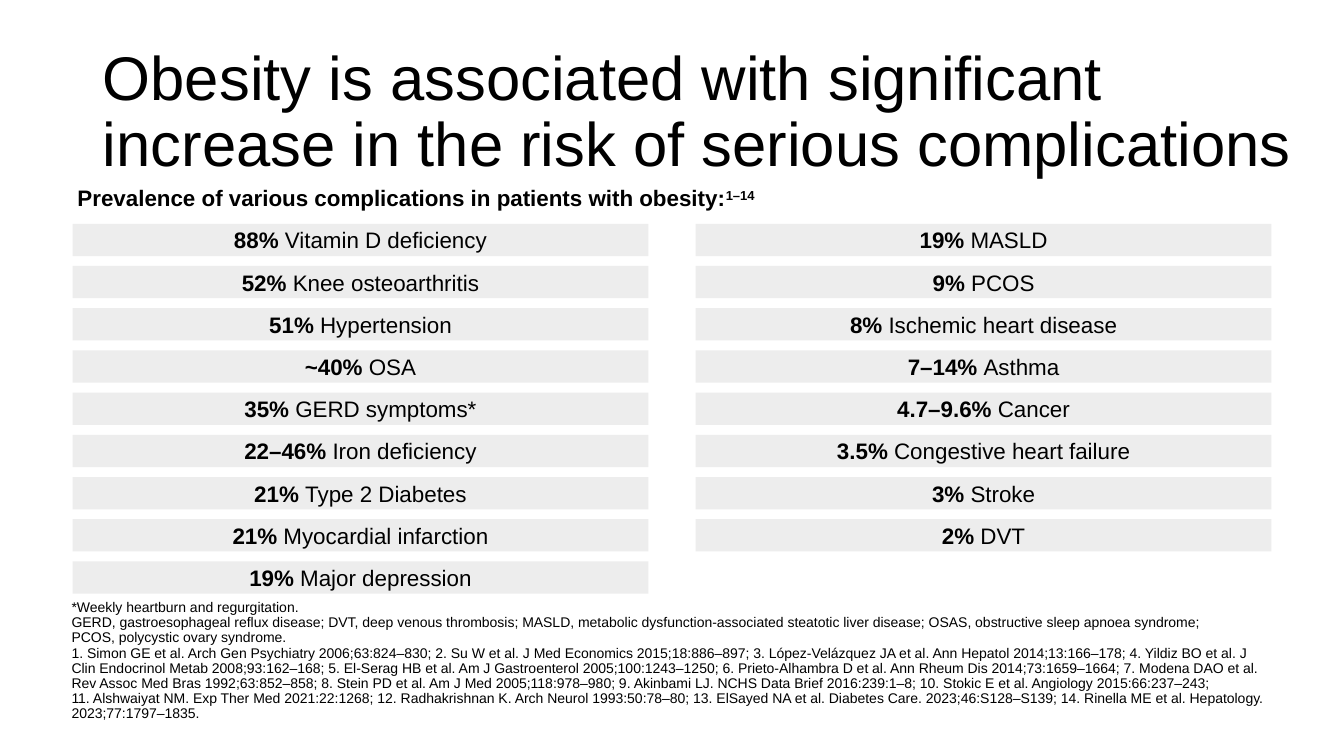
"""Build a slide on the prevalence of complications in patients with obesity."""
from pptx import Presentation
from pptx.dml.color import RGBColor
from pptx.enum.shapes import MSO_SHAPE as SHAPE
from pptx.enum.text import MSO_ANCHOR as ANCHOR, MSO_AUTO_SIZE as AUTO, PP_ALIGN as ALIGN
from pptx.util import Inches, Pt

TITLE = "Obesity is associated with significant increase in the risk of serious complications"
SUBTITLE = "Prevalence of various complications in patients with obesity:"
SUBTITLE_REFS = "1–14"
COLUMNS = [
    (0.72, [
        ("88%", "Vitamin D deficiency"),
        ("52%", "Knee osteoarthritis"),
        ("51%", "Hypertension"),
        ("~40%", "OSA"),
        ("35%", "GERD symptoms*"),
        ("22–46%", "Iron deficiency"),
        ("21%", "Type 2 Diabetes"),
        ("21%", "Myocardial infarction"),
        ("19%", "Major depression"),
    ]),
    (6.9, [
        ("19%", "MASLD"),
        ("9%", "PCOS"),
        ("8%", "Ischemic heart disease"),
        ("7–14%", "Asthma"),
        ("4.7–9.6%", "Cancer"),
        ("3.5%", "Congestive heart failure"),
        ("3%", "Stroke"),
        ("2%", "DVT"),
    ]),
]
FOOTNOTES = [
    "*Weekly heartburn and regurgitation.",
    "GERD, gastroesophageal reflux disease; DVT, deep venous thrombosis; MASLD, metabolic "
    "dysfunction-associated steatotic liver disease; OSAS, obstructive sleep apnoea syndrome; ",
    "PCOS, polycystic ovary syndrome.",
    "1. Simon GE et al. Arch Gen Psychiatry 2006;63:824–830; "
    "2. Su W et al. J Med Economics 2015;18:886–897; "
    "3. López-Velázquez JA et al. Ann Hepatol 2014;13:166–178; "
    "4. Yildiz BO et al. J Clin Endocrinol Metab 2008;93:162–168; "
    "5. El-Serag HB et al. Am J Gastroenterol 2005;100:1243–1250; "
    "6. Prieto-Alhambra D et al. Ann Rheum Dis 2014;73:1659–1664; "
    "7. Modena DAO et al. Rev Assoc Med Bras 1992;63:852–858; "
    "8. Stein PD et al. Am J Med 2005;118:978–980; "
    "9. Akinbami LJ. NCHS Data Brief 2016:239:1–8; "
    "10. Stokic E et al. Angiology 2015:66:237–243; ",
    "11. Alshwaiyat NM. Exp Ther Med 2021:22:1268; "
    "12. Radhakrishnan K. Arch Neurol 1993:50:78–80; "
    "13. ElSayed NA et al. Diabetes Care. 2023;46:S128–S139; "
    "14. Rinella ME et al. Hepatology. 2023;77:1797–1835.",
]

FONT = "Arial"
BLACK = RGBColor(0x00, 0x00, 0x00)
BAR_GREY = RGBColor(0xED, 0xED, 0xED)
BAR_W, BAR_H = 5.71, 0.32
FIRST_TOP, LAST_TOP = 2.22, 5.57
PITCH = (LAST_TOP - FIRST_TOP) / (len(COLUMNS[0][1]) - 1)


def add_run(p, text, size, bold=False):
    """Add one formatted run to a paragraph."""
    r = p.add_run()
    r.text = text
    r.font.name, r.font.size, r.font.bold = FONT, Pt(size), bold
    r.font.color.rgb = BLACK
    return r


def add_title(s):
    """Place and fill the title placeholder."""
    title = s.shapes.title
    title.left, title.top = Inches(0.92), Inches(0.4)
    title.width, title.height = Inches(12.12), Inches(1.45)
    tf = title.text_frame
    tf.word_wrap, tf.auto_size = True, AUTO.NONE
    tf.vertical_anchor = ANCHOR.MIDDLE
    p = tf.paragraphs[0]
    p.alignment, p.line_spacing = ALIGN.LEFT, 0.9
    add_run(p, TITLE, 44)


def add_text_box(s, left, top, width, height):
    """Add a wrapping text box and return its text frame."""
    tf = s.shapes.add_textbox(*map(Inches, (left, top, width, height))).text_frame
    tf.word_wrap = True
    return tf


def add_subtitle(s):
    """Add the bold line with its superscript reference range."""
    tf = add_text_box(s, 0.67, 1.78, 11.78, 0.37)
    tf.auto_size = AUTO.SHAPE_TO_FIT_TEXT
    p = tf.paragraphs[0]
    add_run(p, SUBTITLE, 16, True)
    refs = add_run(p, SUBTITLE_REFS, 16, True)
    refs.font._element.set("baseline", "30000")


def add_bar(s, left, top, share, condition):
    """Add one grey bar naming a condition and its prevalence."""
    bar = s.shapes.add_shape(SHAPE.RECTANGLE, *map(Inches, (left, top, BAR_W, BAR_H)))
    bar.shadow.inherit = False
    bar.fill.solid()
    bar.fill.fore_color.rgb = BAR_GREY
    bar.line.fill.background()
    tf = bar.text_frame
    tf.word_wrap, tf.vertical_anchor = True, ANCHOR.MIDDLE
    p = tf.paragraphs[0]
    p.alignment = ALIGN.CENTER
    add_run(p, f"{share} ", 16, True)
    add_run(p, condition, 16)


def add_footnotes(s):
    """Add the abbreviations and references, growing up from the bottom."""
    tf = add_text_box(s, 0.71, 6.84, 11.9, 0.32)
    tf.margin_left = tf.margin_right = tf.margin_top = tf.margin_bottom = 0
    tf.vertical_anchor = ANCHOR.BOTTOM
    p = tf.paragraphs[0]
    p.line_spacing, p.space_before = 0.9, Pt(10)
    for i, line in enumerate(FOOTNOTES):
        if i:
            p.add_line_break()
        add_run(p, line, 10)


def main():
    """Assemble and save the slide."""
    prs = Presentation()
    prs.slide_width, prs.slide_height = Inches(13.33), Inches(7.5)
    s = prs.slides.add_slide(prs.slide_layouts[5])
    add_title(s)
    add_subtitle(s)
    for left, bars in COLUMNS:
        for row, (share, condition) in enumerate(bars):
            add_bar(s, left, FIRST_TOP + row * PITCH, share, condition)
    add_footnotes(s)
    prs.save("out.pptx")


if __name__ == "__main__":
    main()
